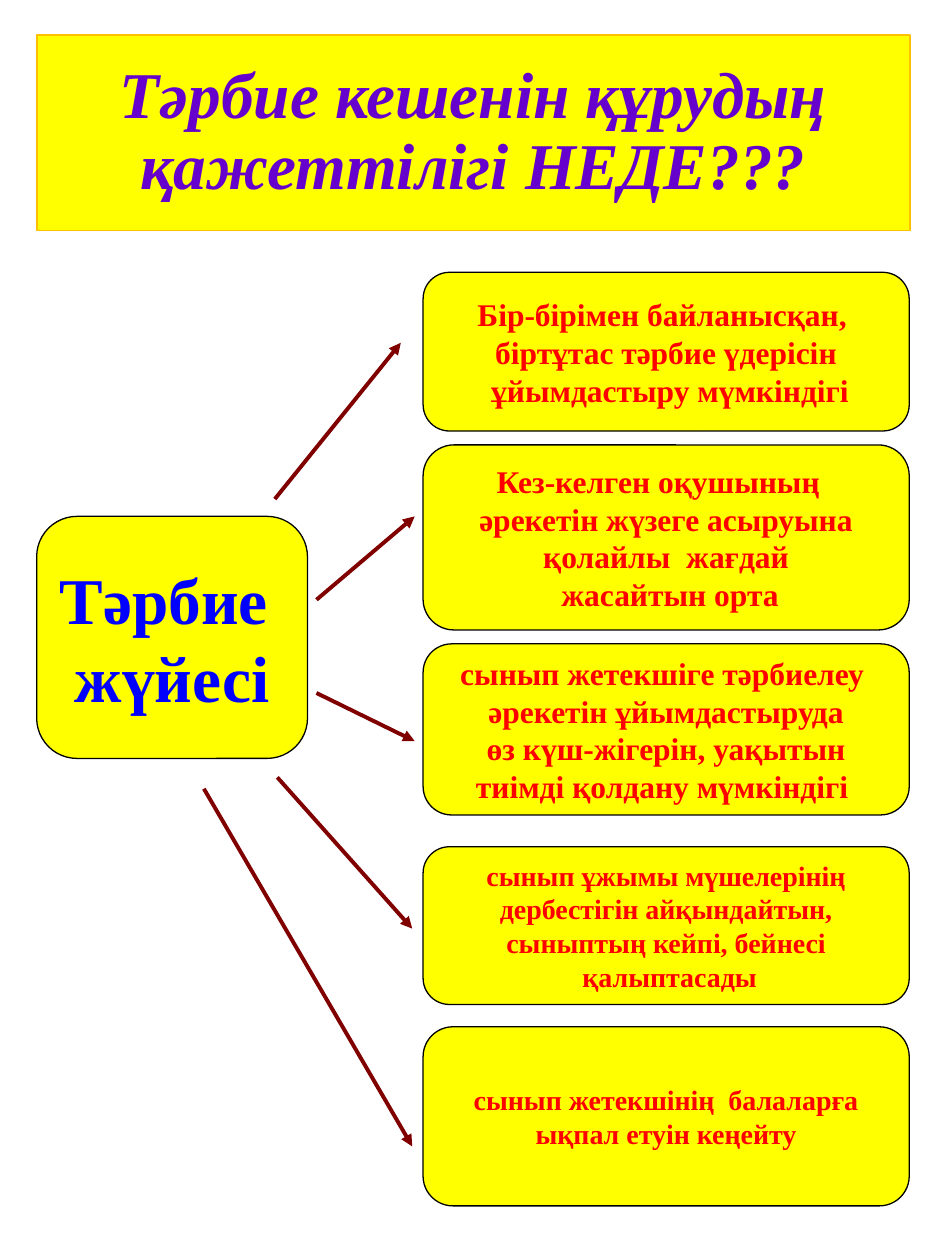
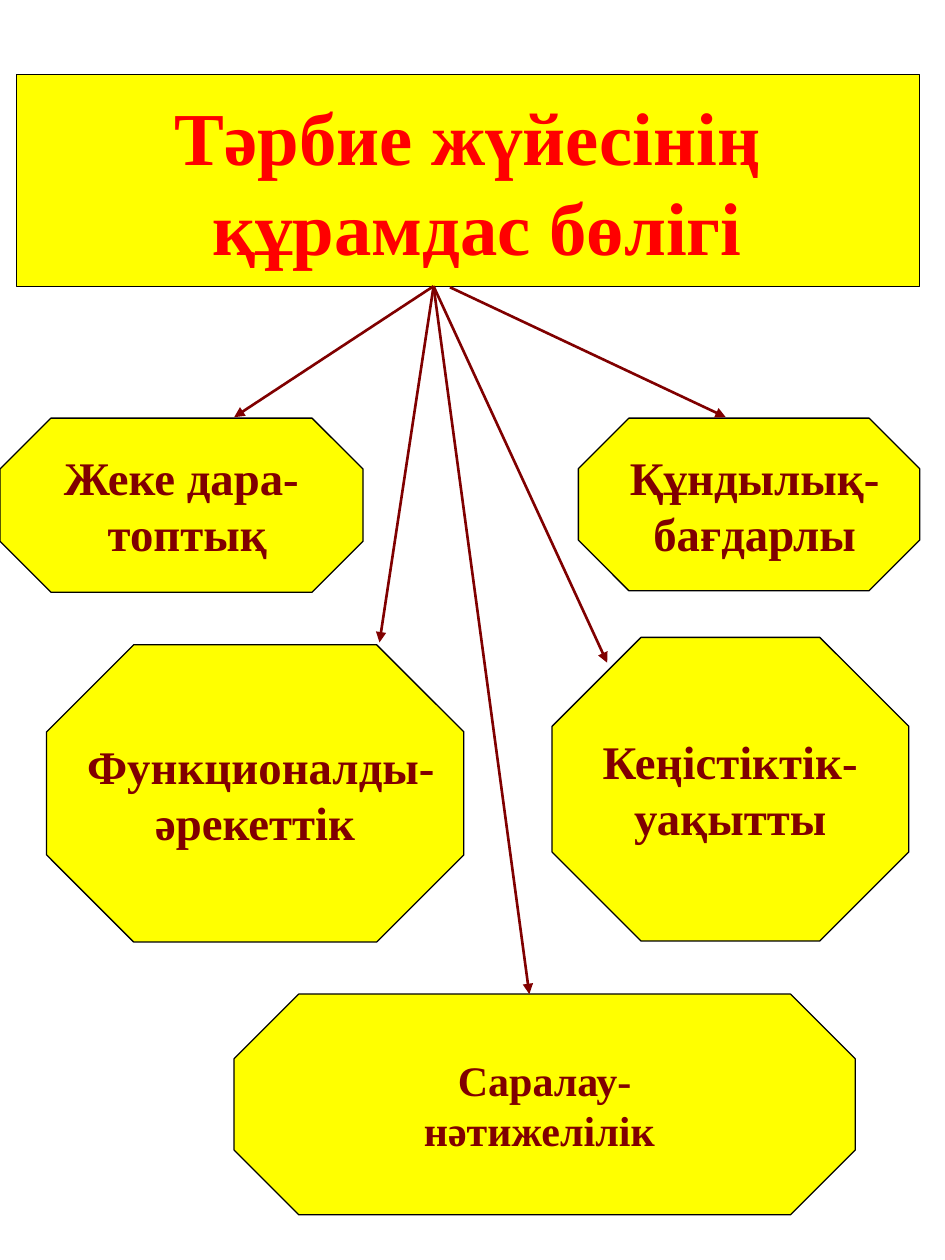
"""Build two slides on the upbringing system: why it is needed and what it consists of."""

from dataclasses import dataclass

from lxml.etree import SubElement
from pptx import Presentation
from pptx.dml.color import RGBColor
from pptx.enum.shapes import MSO_CONNECTOR, MSO_SHAPE
from pptx.enum.text import MSO_ANCHOR, MSO_AUTO_SIZE, PP_ALIGN
from pptx.oxml.ns import qn
from pptx.shapes.autoshape import Shape
from pptx.slide import Slide
from pptx.util import Cm, Pt

YELLOW = RGBColor(0xFF, 0xFF, 0x00)
AMBER = RGBColor(0xFF, 0xC0, 0x00)
BLACK = RGBColor(0x00, 0x00, 0x00)
PURPLE = RGBColor(0x66, 0x00, 0xCC)
BLUE = RGBColor(0x00, 0x00, 0xFF)
RED = RGBColor(0xFF, 0x00, 0x00)
MAROON = RGBColor(0x80, 0x00, 0x00)
FONT = "Times New Roman"
TITLE_ONLY = 5

Point = tuple[float, float]


@dataclass(frozen=True)
class Box:
    """A yellow panel with its place in centimetres."""

    text: str
    left: float
    top: float
    width: float
    height: float
    size: float
    color: RGBColor
    border: RGBColor = BLACK
    weight: float = 0.75
    italic: bool = False
    wrap: bool = False
    spacing: float = 1.0


@dataclass(frozen=True)
class Arrow:
    """A straight arrow between two points in centimetres."""

    start: Point
    end: Point


REASON_LEFT, REASON_WIDTH = 8.53, 9.8
REASONS = [
    ("Бір-бірімен байланысқан, \nбіртұтас тәрбие үдерісін\n ұйымдастыру мүмкіндігі", 5.49, 3.2, 18),
    ("Кез-келген оқушының  \nәрекетін жүзеге асыруына\n қолайлы  жағдай \n жасайтын орта", 8.97, 3.73, 18),
    (
        "сынып жетекшіге тәрбиелеу \nәрекетін ұйымдастыруда\n"
        " өз күш-жігерін, уақытын \nтиімді қолдану мүмкіндігі ",
        12.98, 3.45, 18,
    ),
    (
        "сынып ұжымы мүшелерінің\n дербестігін айқындайтын, \n"
        "сыныптың кейпі, бейнесі\n қалыптасады",
        17.07, 3.18, 16,
    ),
    ("сынып жетекшінің  балаларға\n ықпал етуін кеңейту ", 20.7, 3.61, 16),
]
NEED = Box(
    "Тәрбие кешенін құрудың қажеттілігі НЕДЕ???", 0.74, 0.71, 17.6, 3.94, 37.3, PURPLE,
    border=AMBER, weight=1, italic=True, wrap=True, spacing=0.9,
)
SYSTEM = Box("Тәрбие \nжүйесі", 0.74, 10.41, 5.46, 4.88, 37.3, BLUE)
NEED_ARROWS = [
    Arrow((5.54, 10.06), (8.08, 6.91)),
    Arrow((6.38, 12.09), (8.36, 10.41)),
    Arrow((6.38, 13.97), (8.36, 14.94)),
    Arrow((5.59, 15.67), (8.31, 18.72)),
    Arrow((4.11, 15.9), (8.31, 23.11)),
]

WHOLE = Box("Тәрбие жүйесінің\n құрамдас бөлігі", 0.33, 1.5, 18.21, 4.27, 42.7, RED)
PARTS = [
    Box("Жеке дара-\n топтық", 0, 8.43, 7.32, 3.51, 26.7, MAROON),
    Box(" Функционалды-\nәрекеттік", 0.94, 13, 8.41, 5.99, 26.7, MAROON),
    Box(" Құндылық-\n бағдарлы", 11.66, 8.43, 6.88, 3.48, 26.7, MAROON),
    Box("Кеңістіктік-\nуақытты", 11.13, 12.85, 7.19, 6.12, 26.7, MAROON),
    Box("Саралау-\nнәтижелілік ", 4.72, 20.04, 12.52, 4.45, 24, MAROON),
]
SOURCE = (8.74, 5.77)
PART_ARROWS = [
    Arrow(SOURCE, (4.72, 8.41)),
    Arrow(SOURCE, (7.65, 12.95)),
    Arrow((9.07, 5.79), (14.63, 8.41)),
    Arrow(SOURCE, (12.24, 13.36)),
    Arrow(SOURCE, (10.67, 20.04)),
]


def style(shape: Shape, box: Box) -> None:
    """Give a shape the fill, border and text of a box."""
    shape.shadow.inherit = False
    shape.fill.solid()
    shape.fill.fore_color.rgb = YELLOW
    shape.line.color.rgb = box.border
    shape.line.width = Pt(box.weight)
    frame = shape.text_frame
    frame.text = box.text
    frame.auto_size = MSO_AUTO_SIZE.NONE
    frame.word_wrap = box.wrap
    frame.vertical_anchor = MSO_ANCHOR.MIDDLE
    for line in frame.paragraphs:
        line.alignment = PP_ALIGN.CENTER
        line.line_spacing = box.spacing
        for run in line.runs:
            font = run.font
            font.name, font.size = FONT, Pt(box.size)
            font.bold, font.italic = True, box.italic
            font.color.rgb = box.color


def add_title(slide: Slide, box: Box, outline: str) -> None:
    """Turn the title placeholder into a panel with a preset outline."""
    title = slide.shapes.title
    title.left, title.top = Cm(box.left), Cm(box.top)
    title.width, title.height = Cm(box.width), Cm(box.height)
    preset = SubElement(title.element.spPr, qn("a:prstGeom"), prst=outline)
    SubElement(preset, qn("a:avLst"))
    style(title, box)


def add_box(slide: Slide, box: Box, kind: MSO_SHAPE) -> None:
    """Add a panel of the given kind."""
    shape = slide.shapes.add_shape(
        kind, Cm(box.left), Cm(box.top), Cm(box.width), Cm(box.height)
    )
    style(shape, box)


def add_arrow(slide: Slide, arrow: Arrow, weight: float) -> None:
    """Add a maroon arrow with a triangular head."""
    points = [Cm(value) for value in arrow.start + arrow.end]
    link = slide.shapes.add_connector(MSO_CONNECTOR.STRAIGHT, *points)
    link.line.color.rgb = MAROON
    link.line.width = Pt(weight)
    SubElement(link.line._get_or_add_ln(), qn("a:tailEnd"), type="triangle")
    SubElement(link.element.spPr, qn("a:effectLst"))


def main() -> None:
    """Build and save both slides."""
    deck = Presentation()
    deck.slide_width, deck.slide_height = Cm(19.05), Cm(25.4)
    layout = deck.slide_layouts[TITLE_ONLY]
    reasons = [
        Box(text, REASON_LEFT, top, REASON_WIDTH, height, size, RED)
        for text, top, height, size in REASONS
    ]
    pages = [
        (NEED, "rect", [SYSTEM, *reasons], MSO_SHAPE.ROUNDED_RECTANGLE, NEED_ARROWS, 2.25),
        (WHOLE, "octagon", PARTS, MSO_SHAPE.OCTAGON, PART_ARROWS, 1.5),
    ]
    for title, outline, boxes, kind, arrows, weight in pages:
        slide = deck.slides.add_slide(layout)
        add_title(slide, title, outline)
        for box in boxes:
            add_box(slide, box, kind)
        for arrow in arrows:
            add_arrow(slide, arrow, weight)
    deck.save("out.pptx")


if __name__ == "__main__":
    main()
